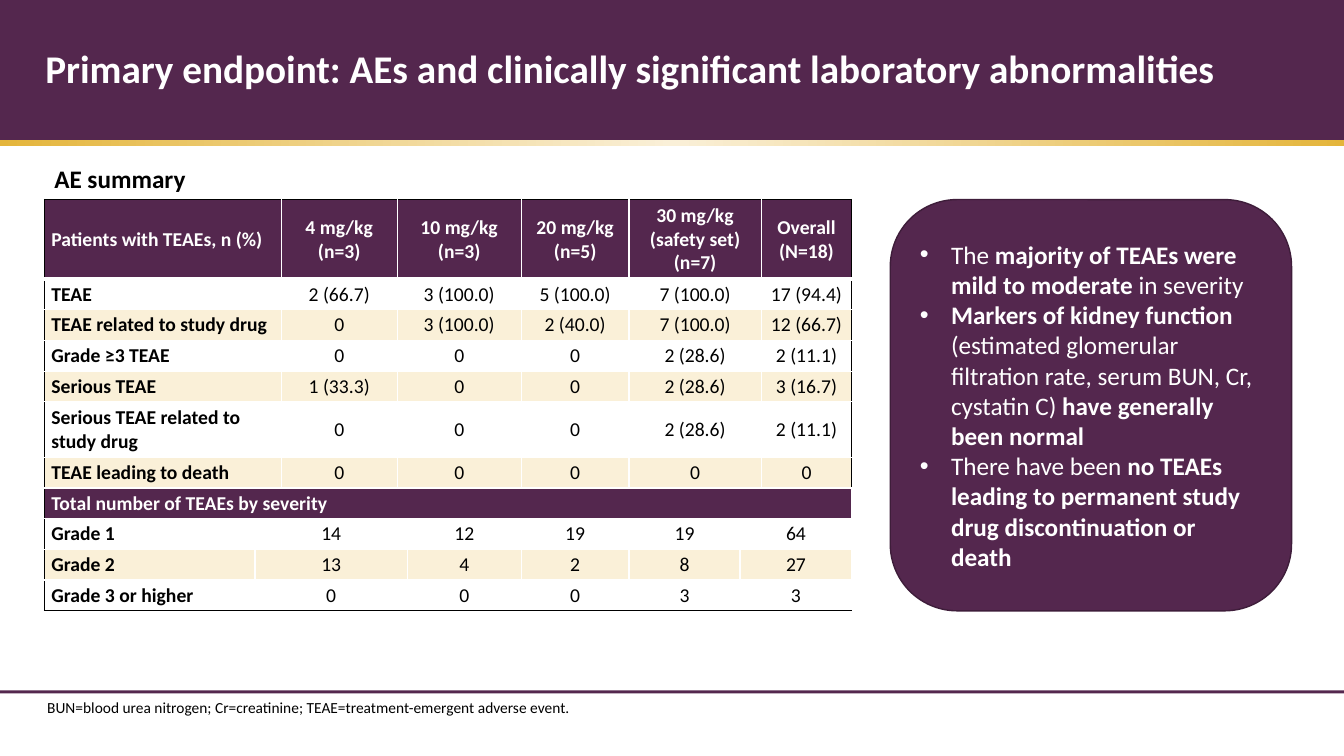
from lxml.etree import SubElement as Sub
from pptx import Presentation
from pptx.dml.color import RGBColor as Rgb
from pptx.enum.shapes import MSO_SHAPE as Geom
from pptx.enum.text import MSO_ANCHOR as Anchor, MSO_AUTO_SIZE as Auto, PP_ALIGN as Align
from pptx.oxml.ns import qn
from pptx.util import Inches as Inch, Pt

PLUM, GOLD, CREAM = "54274E", "E4B53B", "FAF0D8"
EDGE, WHITE, BLACK = "3E1D3A", "FFFFFF", "000000"
WIDE, HIGH = 13.33, 7.5

TITLE = "Primary endpoint: AEs and clinically significant laboratory abnormalities"
LABEL = "AE summary"
NOTE = "BUN=blood urea nitrogen; Cr=creatinine; TEAE=treatment-emergent adverse event."
# Asterisk pairs enclose bold words.
POINTS = [
    "The **majority of TEAEs were mild to moderate **in severity",
    "**Markers of kidney function **(estimated glomerular filtration rate, "
    "serum BUN, Cr, cystatin C) **have generally been normal**",
    "There have been **no TEAEs leading to permanent study drug "
    "discontinuation or death**",
]
HEAD = ["Patients with TEAEs, n (%)", "4 mg/kg\n(n=3)", "10 mg/kg\n(n=3)",
        "20 mg/kg\n(n=5)", "30 mg/kg (safety set)\n(n=7)", "Overall\n(N=18)"]
EVENTS = [
    ["TEAE", "2 (66.7)", "3 (100.0)", "5 (100.0)", "7 (100.0)", "17 (94.4)"],
    ["TEAE related to study drug", "0", "3 (100.0)", "2 (40.0)", "7 (100.0)", "12 (66.7)"],
    ["Grade ≥3 TEAE", "0", "0", "0", "2 (28.6)", "2 (11.1)"],
    ["Serious TEAE", "1 (33.3)", "0", "0", "2 (28.6)", "3 (16.7)"],
    ["Serious TEAE related to study drug", "0", "0", "0", "2 (28.6)", "2 (11.1)"],
    ["TEAE leading to death", "0", "0", "0", "0", "0"],
]
BAND = ["Total number of TEAEs by severity"]
GRADES = [
    ["Grade 1", "14", "12", "19", "19", "64"],
    ["Grade 2", "13", "4", "2", "8", "27"],
    ["Grade 3 or higher", "0", "0", "0", "3", "3"],
]
COLS = [2.09, 0.26, 1.15, 0.1, 1.13, 1.07, 1.1, 0.21, 0.9]
DOSE, GRADE, FULL = (2, 1, 2, 1, 2, 1), (1, 3, 1, 1, 1, 2), (9,)
LEFT, TOP, TALL = 0.44, 1.98, 4.08
HEAD_H, TWO_H = 0.79, 0.55

# Each row: texts, column spans, fill
ROWS = [(HEAD, DOSE, PLUM)]
ROWS += [(row, DOSE, (WHITE, CREAM)[i % 2]) for i, row in enumerate(EVENTS)]
ROWS += [(BAND, FULL, PLUM)]
ROWS += [(row, GRADE, (WHITE, CREAM)[i % 2]) for i, row in enumerate(GRADES)]


def color(code):
    return Rgb.from_string(code)


def write(frame, lines, size=14, ink=BLACK, bold=False, align=Align.LEFT,
          bullet=False, lead=None):
    """Fill a text frame; words between ** pairs switch weight."""
    for i, line in enumerate(lines):
        para = frame.paragraphs[0] if i == 0 else frame.add_paragraph()
        if bullet:
            props = para._p.get_or_add_pPr()
            props.set("marL", str(Inch(0.31)))
            props.set("indent", str(-Inch(0.31)))
            Sub(props, qn("a:buFont"), typeface="Arial")
            Sub(props, qn("a:buChar"), char="•")
        para.alignment = align
        if lead:
            para.line_spacing = lead
        for j, part in enumerate(line.split("**")):
            if part:
                run = para.add_run()
                run.text = part
                run.font.name, run.font.size = "Calibri", Pt(size)
                run.font.bold = bold != bool(j % 2)
                run.font.color.rgb = color(ink)


def shape(kind, x, y, w, h, fill):
    item = slide.shapes.add_shape(kind, Inch(x), Inch(y), Inch(w), Inch(h))
    item.shadow.inherit = False
    item.fill.solid()
    item.fill.fore_color.rgb = color(fill)
    item.line.fill.background()
    return item


def label(text, x, y, w, h, **style):
    box = slide.shapes.add_textbox(Inch(x), Inch(y), Inch(w), Inch(h))
    box.text_frame.word_wrap = True
    write(box.text_frame, [text], **style)


def border(cell, side, ink, width=1):
    line = Sub(cell._tc.get_or_add_tcPr(), qn("a:ln" + side), w=str(Pt(width)))
    Sub(Sub(line, qn("a:solidFill")), qn("a:srgbClr"), val=ink)


def outline(cell, r, c, first, last):
    """Black around the table, white inside it."""
    end = len(ROWS) - 1
    if first:
        border(cell, "L", BLACK if c == 0 else WHITE)
    if last:
        border(cell, "R", BLACK if c == len(COLS) - 1 else WHITE)
    border(cell, "T", BLACK if r == 0 else WHITE)
    border(cell, "B", BLACK if r == end else WHITE, 3 if r == 0 else 1)


def summary():
    """Adverse event table with merged columns."""
    table = slide.shapes.add_table(len(ROWS), len(COLS), Inch(LEFT), Inch(TOP),
                                   Inch(sum(COLS)), Inch(TALL)).table
    table.first_row = table.horz_banding = False
    for col, width in zip(table.columns, COLS):
        col.width = Inch(width)
    plain = (TALL - HEAD_H - TWO_H) / (len(ROWS) - 2)
    fixed = {0: HEAD_H, 5: TWO_H}
    for r, (texts, spans, fill) in enumerate(ROWS):
        table.rows[r].height = Inch(fixed.get(r, plain))
        start = 0
        for i, (text, span) in enumerate(zip(texts, spans)):
            stop = start + span - 1
            for c in range(start, stop + 1):
                cell = table.cell(r, c)
                outline(cell, r, c, c == start, c == stop)
                cell.fill.solid()
                cell.fill.fore_color.rgb = color(fill)
            cell = table.cell(r, start)
            if span > 1:
                cell.merge(table.cell(r, stop))
            cell.vertical_anchor = Anchor.MIDDLE
            cell.margin_left = cell.margin_right = Inch(0.07)
            cell.margin_top = cell.margin_bottom = Inch(0.03)
            write(cell.text_frame, text.split("\n"),
                  ink=WHITE if fill == PLUM else BLACK,
                  bold=i == 0 or fill == PLUM,
                  align=Align.CENTER if i else Align.LEFT)
            start = stop + 1


deck = Presentation()
deck.slide_width, deck.slide_height = Inch(WIDE), Inch(HIGH)
slide = deck.slides.add_slide(deck.slide_layouts[5])

shape(Geom.RECTANGLE, 0, 0, WIDE, 1.4, PLUM)
strip = shape(Geom.RECTANGLE, 0, 1.39, WIDE, 0.06, GOLD)
strip.fill.gradient()
strip.fill.gradient_angle = 0
stops = next(strip.element.iter(qn("a:gsLst")))
for old in list(stops):
    stops.remove(old)
for pos, ink in ((0, GOLD), (50, CREAM), (100, GOLD)):
    Sub(Sub(stops, qn("a:gs"), pos=str(pos * 1000)), qn("a:srgbClr"), val=ink)
shape(Geom.RECTANGLE, 0, 6.85, WIDE, 0.03, PLUM)

title = slide.shapes.title
slide.shapes.element.append(title.element)  # above the header bar
title.left, title.top, title.width, title.height = map(Inch, (0.37, 0.41, 12.6, 0.58))
frame = title.text_frame
frame.auto_size, frame.word_wrap = Auto.NONE, True
frame.vertical_anchor = Anchor.MIDDLE
frame.margin_left = frame.margin_right = Inch(0.08)
frame.margin_top = frame.margin_bottom = Inch(0.08)
write(frame, [TITLE], size=28, ink=WHITE, bold=True, lead=0.9)

summary()

panel = shape(Geom.ROUNDED_RECTANGLE, 8.83, TOP, 3.98, TALL, PLUM)
panel.line.color.rgb, panel.line.width = color(EDGE), Pt(1)
panel.text_frame.word_wrap = True
panel.text_frame.vertical_anchor = Anchor.MIDDLE
write(panel.text_frame, POINTS, size=18, ink=WHITE, bullet=True)

label(NOTE, 0.37, 6.88, 12.6, 0.29, size=11)
label(LABEL, LEFT, 1.57, 8, 0.4, size=18, bold=True)

deck.save("out.pptx")
